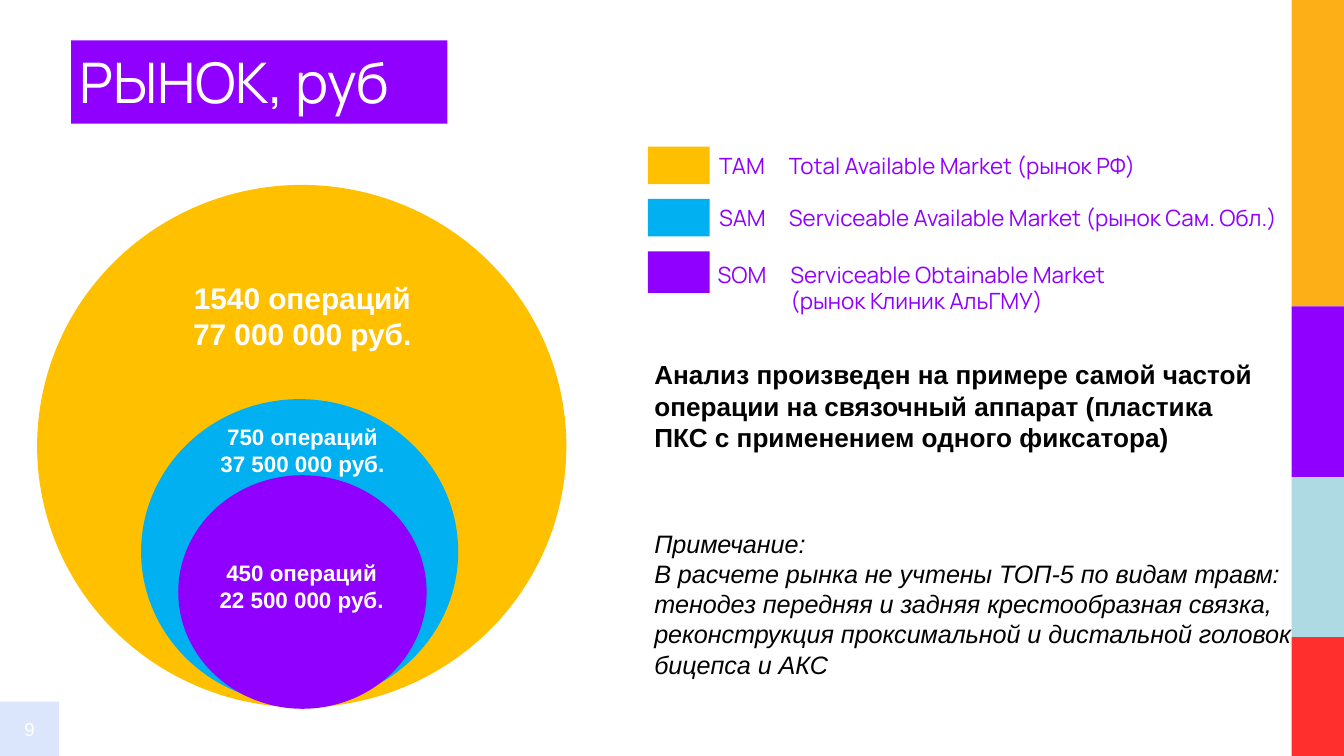
"""Build the market size slide with nested TAM, SAM and SOM circles."""
from pptx import Presentation
from pptx.dml.color import RGBColor
from pptx.enum.shapes import MSO_SHAPE as SHAPE
from pptx.enum.text import MSO_ANCHOR as ANCHOR, MSO_AUTO_SIZE as AUTO, PP_ALIGN as ALIGN
from pptx.util import Inches, Pt

COLORS = {
    "white": "FFFFFF", "black": "000000", "violet": "8F00FF", "gold": "FFC000",
    "blue": "00B0F0", "orange": "FCAF17", "aqua": "ADDAE3", "red": "FF2F2D",
    "pale": "DBE6FD",
}


def add_filled(kind, box, color, line=0):
    sp = s.shapes.add_shape(kind, *map(Inches, box))
    sp.shadow.inherit = False
    sp.fill.solid()
    sp.fill.fore_color.rgb = RGBColor.from_string(COLORS[color])
    if line:
        sp.line.color.rgb = RGBColor.from_string(COLORS[color])
        sp.line.width = Pt(line)
    else:
        sp.line.fill.background()
    return sp


def write(sp, lines, size, color, font="Arial", align=ALIGN.LEFT, bold=False,
          italic=False, inset=(0.1, 0.05)):
    tf = sp.text_frame
    tf.word_wrap = True
    tf.auto_size = AUTO.NONE
    tf.margin_left = tf.margin_right = Inches(inset[0])
    tf.margin_top = tf.margin_bottom = Inches(inset[1])
    tf.text = "\n".join(lines)
    for p in tf.paragraphs:
        p.alignment = align
        p.font.name, p.font.size = font, Pt(size)
        p.font.bold, p.font.italic = bold, italic
        p.font.color.rgb = RGBColor.from_string(COLORS[color])


prs = Presentation()
prs.slide_width, prs.slide_height = Inches(10), Inches(10 * 9 / 16)
s = prs.slides.add_slide(prs.slide_layouts[5])

page = add_filled(SHAPE.RECTANGLE, (0, 5.22, 0.44, 0.4), "pale")
page.height = prs.slide_height - page.top
write(page, ["9"], 10, "white", align=ALIGN.CENTER, inset=(0, 0))
page.text_frame.vertical_anchor = ANCHOR.MIDDLE

band = add_filled(SHAPE.RECTANGLE, (0.53, 0.3, 2.8, 0.62), "violet")
title = s.shapes.title
title.left, title.top, title.width, title.height = map(Inches, (0.53, 0.29, 5.09, 0.63))
write(title, ["РЫНОК, руб"], 30, "white", "Manrope", inset=(0.06, 0.06))
title.text_frame.vertical_anchor = ANCHOR.MIDDLE
band.element.addnext(title.element)

top = 0
for color, height in [("orange", 2.28), ("violet", 1.27), ("aqua", 1.19), ("red", 0.88)]:
    stripe = add_filled(SHAPE.RECTANGLE, (9.61, top, 0.39, height), color)
    top += height
stripe.height = prs.slide_height - stripe.top

for box, color, line in [
    ((0.29, 1.39, 3.91, 3.86), "gold", 2),
    ((1.05, 2.97, 2.36, 2.27), "blue", 0),
    ((1.34, 3.55, 1.82, 1.71), "violet", 2),
]:
    add_filled(SHAPE.OVAL, box, color, line)

for box, lines, size in [
    ((1.32, 2.03, 1.86, 0.64), ["1540 операций", "77 000 000 руб."], 16),
    ((1.44, 3.1, 1.62, 0.5), ["750 операций", "37 500 000 руб."], 12),
    ((1.46, 4.11, 1.57, 0.5), ["450 операций", "22 500 000 руб."], 12),
]:
    label = s.shapes.add_textbox(*map(Inches, box))
    write(label, lines, size, "white", align=ALIGN.CENTER, bold=True)

for color, top, height, text_top, term_box, meaning_box, term, meaning in [
    ("gold", 1.09, 0.28, 1.09, (5.28, 0.51, 0.28), (5.8, 2.93, 0.28), "TAM",
     "Total Available Market (рынок РФ)"),
    ("blue", 1.48, 0.28, 1.48, (5.28, 0.51, 0.28), (5.8, 3.91, 0.28), "SAM",
     "Serviceable Available Market (рынок Сам. Обл.)"),
    ("violet", 1.87, 0.31, 1.9, (5.27, 0.53, 0.28), (5.81, 2.55, 0.44), "SOM",
     "Serviceable Obtainable Market (рынок Клиник АльГМУ)"),
]:
    add_filled(SHAPE.RECTANGLE, (4.82, top, 0.46, height), color)
    for (x, w, h), text in [(term_box, term), (meaning_box, meaning)]:
        entry = s.shapes.add_textbox(Inches(x), Inches(text_top), Inches(w), Inches(h))
        write(entry, [text], 12, "violet", "Manrope", inset=(0.07, 0.04))

analysis = s.shapes.add_textbox(*map(Inches, (4.77, 2.62, 4.72, 0.81)))
write(analysis, ["Анализ произведен на примере самой частой операции на связочный аппарат "
                 "(пластика ПКС с применением одного фиксатора)"], 14, "black", bold=True)

note = s.shapes.add_textbox(*map(Inches, (4.77, 3.88, 4.94, 1.28)))
write(note, ["Примечание:",
             "В расчете рынка не учтены ТОП-5 по видам травм: тенодез передняя и задняя "
             "крестообразная связка, реконструкция проксимальной и дистальной головок "
             "бицепса и АКС"], 13.5, "black", italic=True)

prs.save("out.pptx")
